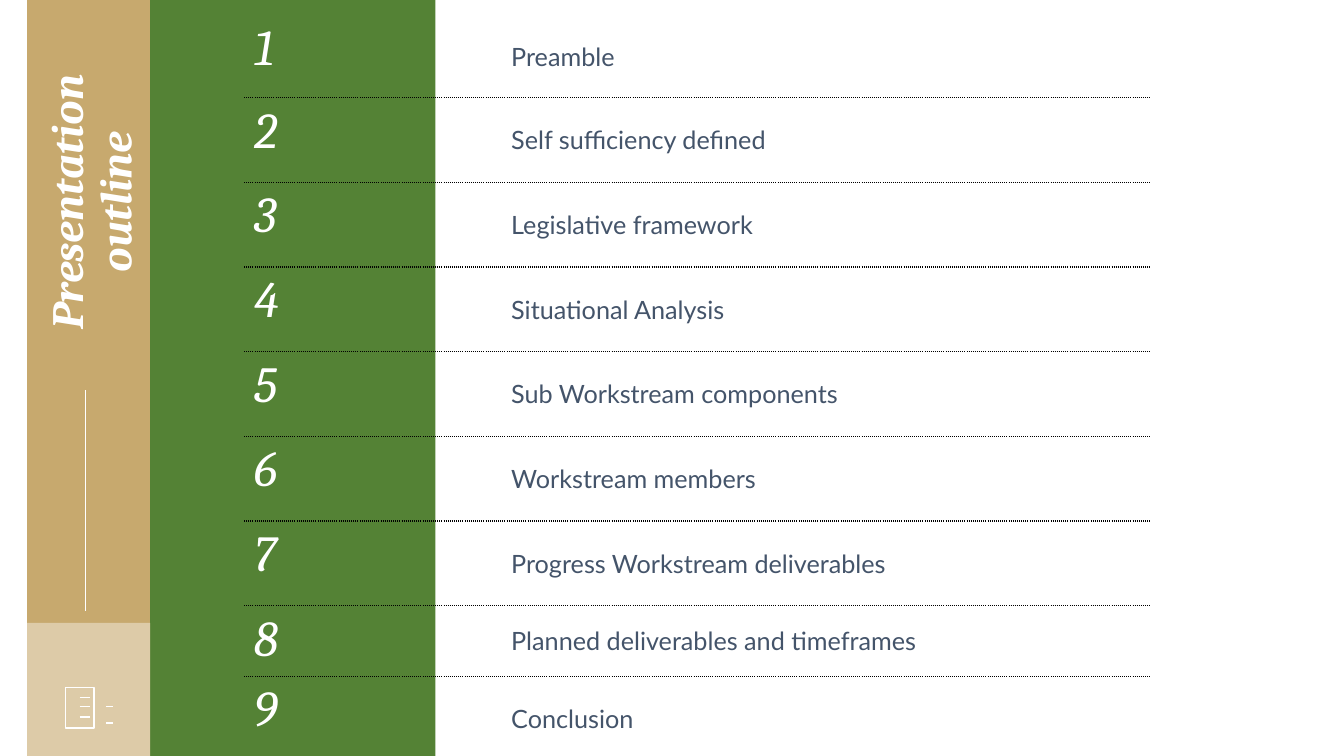
from math import cos, radians, sin

from lxml.etree import SubElement
from pptx import Presentation
from pptx.dml.color import RGBColor
from pptx.enum.shapes import MSO_CONNECTOR, MSO_SHAPE
from pptx.enum.text import MSO_ANCHOR, PP_ALIGN
from pptx.oxml import parse_xml
from pptx.oxml.ns import nsdecls, qn
from pptx.util import Inches, Pt

WHITE = RGBColor(0xFF, 0xFF, 0xFF)
GOLD = RGBColor(0xC7, 0xA9, 0x6E)
SAND = RGBColor(0xDD, 0xCB, 0xA8)
GREEN = RGBColor(0x54, 0x82, 0x35)
SLATE = RGBColor(0x44, 0x54, 0x6A)

TOPICS = [
    "Preamble",
    "Self sufficiency defined",
    "Legislative framework",
    "Situational Analysis",
    "Sub Workstream components",
    "Workstream members",
    "Progress Workstream deliverables",
    "Planned deliverables and timeframes",
    "Conclusion",
]
ROW_HEIGHTS = [0.82] + [0.84] * 6 + [0.7, 0.84]
NO_STYLE = "{2D5ABB26-0587-4C30-8999-92F81FD0307C}"


def write(frame, text, font="Cambria", size=18, color=WHITE, bold=False,
          italic=False, align=PP_ALIGN.LEFT, spacing=1.0):
    paragraph = frame.paragraphs[0]
    paragraph.alignment = align
    paragraph.line_spacing = spacing
    run = paragraph.add_run()
    run.text = text
    run.font.name = font
    run.font.size = Pt(size)
    run.font.color.rgb = color
    run.font.bold = bold
    run.font.italic = italic


def arc(cx, cy, rx, ry, start, end, steps=16):
    angles = [radians(start + (end - start) * i / steps) for i in range(steps + 1)]
    return [(cx + rx * cos(a), cy + ry * sin(a)) for a in angles]


def dotted_edge(cell, side):
    cell._tc.get_or_add_tcPr().insert(0, parse_xml(
        f'<a:{side} {nsdecls("a")} w="12700"><a:solidFill><a:srgbClr val="000000"/>'
        f'</a:solidFill><a:prstDash val="sysDot"/></a:{side}>'))


class OutlineSlide:
    icon_width = 1.25

    def __init__(self, slide):
        self.slide = slide
        self.shapes = slide.shapes

    def outline(self, shape, width):
        shape.line.color.rgb = WHITE
        shape.line.width = Pt(width)

    def block(self, x, y, w, h, fill=None):
        rect = self.shapes.add_shape(
            MSO_SHAPE.RECTANGLE, Inches(x), Inches(y), Inches(w), Inches(h))
        rect.shadow.inherit = False
        if fill is None:
            rect.fill.background()
            self.outline(rect, self.icon_width)
        else:
            rect.fill.solid()
            rect.fill.fore_color.rgb = fill
            rect.line.fill.background()

    def line(self, x1, y1, x2, y2, width=icon_width):
        rule = self.shapes.add_connector(
            MSO_CONNECTOR.STRAIGHT, Inches(x1), Inches(y1), Inches(x2), Inches(y2))
        self.outline(rule, width)
        SubElement(rule._element.spPr, qn("a:effectLst"))

    def stroke(self, points, close=False):
        builder = self.shapes.build_freeform(*points[0], scale=Inches(1))
        builder.add_line_segments(points[1:], close=close)
        path = builder.convert_to_shape()
        path.shadow.inherit = False
        path.fill.background()
        self.outline(path, self.icon_width)

    def title(self, text, x, y, w, h):
        box = self.shapes.add_textbox(Inches(x), Inches(y), Inches(w), Inches(h))
        box.rotation = 270
        frame = box.text_frame
        frame.word_wrap = True
        frame.vertical_anchor = MSO_ANCHOR.MIDDLE
        frame.margin_left = frame.margin_right = Inches(0)
        frame.margin_top = frame.margin_bottom = Inches(0)
        write(frame, text, size=32, bold=True, italic=True,
              align=PP_ALIGN.CENTER, spacing=0.9)

    def checklist_icon(self):
        self.shapes = self.slide.shapes.add_group_shape().shapes
        self.block(0.65, 6.82, 0.28, 0.4)
        self.stroke([(0.65, 7.06), (0.58, 7.06)]
                    + arc(0.65, 6.75, 0.07, 0.07, 180, 450)
                    + [(0.65, 6.78), (0.72, 6.78)])
        self.stroke(arc(0.93, 6.75, 0.07, 0.07, 90, -90) + [(0.65, 6.68)])
        for y in (6.92, 7.01, 7.11):
            self.line(0.79, y, 0.89, y)
        for y in (6.87, 6.96):
            self.stroke([(0.7, y + 0.03), (0.71, y + 0.05), (0.76, y)])
        self.stroke(arc(1.085, 7.19, 0.035, 0.03, 0, 180)
                    + arc(1.085, 6.84, 0.035, 0.03, 180, 360), close=True)
        for y in (7.17, 7.01):
            self.line(1.05, y, 1.12, y)
        self.stroke([(1, 7.05)] + arc(1.04, 6.87, 0.04, 0.04, 180, 270) + [(1.05, 6.83)])
        self.shapes = self.slide.shapes

    def agenda(self, topics, x, y, widths, heights):
        table = self.shapes.add_table(
            len(topics), len(widths), Inches(x), Inches(y),
            Inches(sum(widths)), Inches(sum(heights))).table
        table.first_row = table.horz_banding = False
        table._tbl.tblPr.find(qn("a:tableStyleId")).text = NO_STYLE
        for column, width in zip(table.columns, widths):
            column.width = Inches(width)
        for index, (topic, height) in enumerate(zip(topics, heights)):
            table.rows[index].height = Inches(height)
            number_cell, topic_cell = table.rows[index].cells
            write(number_cell.text_frame, str(index + 1), size=36, italic=True)
            write(topic_cell.text_frame, topic, font="Lato", color=SLATE)
            topic_cell.vertical_anchor = MSO_ANCHOR.MIDDLE
            for cell in (number_cell, topic_cell):
                cell.fill.background()
                if index < len(topics) - 1:
                    dotted_edge(cell, "lnB")
                if index > 0:
                    dotted_edge(cell, "lnT")


def main():
    deck = Presentation()
    deck.slide_width = Inches(13.33)
    deck.slide_height = Inches(7.5)
    page = OutlineSlide(deck.slides.add_slide(deck.slide_layouts[6]))
    page.block(0.27, 0, 1.22, 6.18, GOLD)
    page.block(1.49, 0, 2.83, 7.5, GREEN)
    page.block(0.27, 6.18, 1.22, 1.32, SAND)
    page.title("Presentation outline", -0.94, 1.52, 3.72, 0.97)
    page.line(0.85, 3.87, 0.85, 6.06, width=0.5)
    page.checklist_icon()
    page.agenda(TOPICS, 2.42, 0.15, [2.55, 6.44], ROW_HEIGHTS)
    deck.save("out.pptx")


if __name__ == "__main__":
    main()
